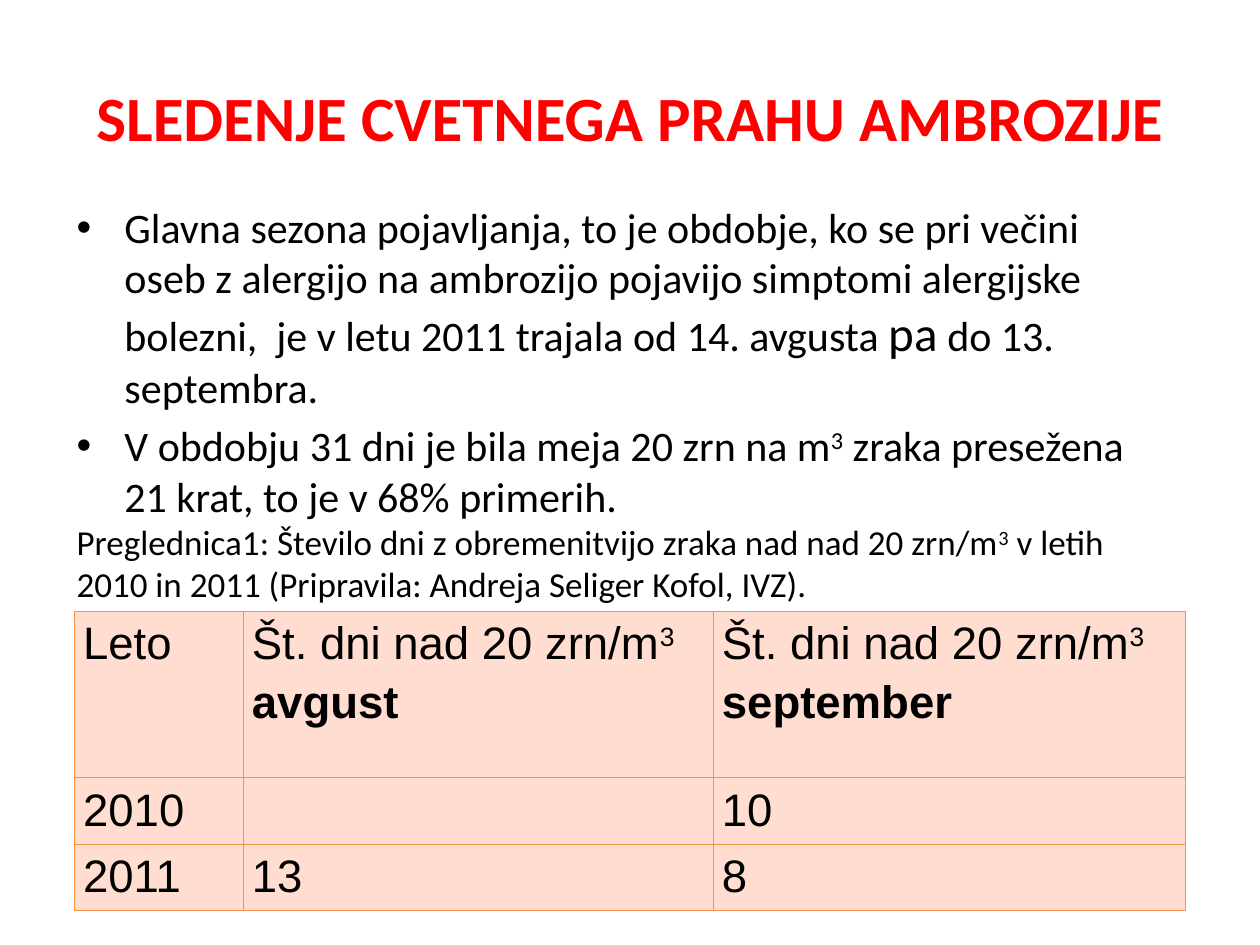
from lxml.etree import SubElement
from pptx import Presentation
from pptx.dml.color import RGBColor
from pptx.enum.text import MSO_ANCHOR as Anchor, PP_ALIGN as Align
from pptx.oxml.ns import qn
from pptx.util import Inches, Pt

RED = RGBColor(0xFF, 0x00, 0x00)
BLACK = RGBColor(0x00, 0x00, 0x00)
PEACH = RGBColor(0xFF, 0xDD, 0xD0)
ORANGE = RGBColor(0xF6, 0x92, 0x40)


class SlideBuilder:
    text_font = "Calibri"
    table_font = "Arial"
    table_size = 26
    border_width = 0.75

    def __init__(self, slide):
        self.slide = slide

    def text_frame(self, left, top, width, height, anchor=Anchor.TOP):
        box = self.slide.shapes.add_textbox(
            Inches(left), Inches(top), Inches(width), Inches(height))
        frame = box.text_frame
        frame.word_wrap = True
        frame.vertical_anchor = anchor
        return frame

    def paragraph(self, frame, first):
        return frame.paragraphs[0] if first else frame.add_paragraph()

    def run(self, paragraph, text, size, font=text_font, color=BLACK,
            bold=False, superscript=False):
        run = paragraph.add_run()
        run.text = text
        run.font.size = Pt(size)
        run.font.name = font
        run.font.color.rgb = color
        run.font.bold = bold
        if superscript:
            run.font._element.set("baseline", "30000")

    def bullet(self, paragraph, size):
        """Hang the paragraph behind a round bullet."""
        paragraph.space_before = Pt(0.2 * size)
        properties = paragraph._p.get_or_add_pPr()
        indent = Inches(0.38)
        properties.set("marL", str(indent))
        properties.set("indent", str(-indent))
        SubElement(properties, qn("a:buFont")).set("typeface", "Arial")
        SubElement(properties, qn("a:buChar")).set("char", "•")

    def title(self, text):
        frame = self.text_frame(0.5, 0.3, 9, 1.25, Anchor.MIDDLE)
        paragraph = frame.paragraphs[0]
        paragraph.alignment = Align.CENTER
        self.run(paragraph, text, 36, color=RED, bold=True)

    def body(self, paragraphs):
        """Each paragraph is (bulleted, size, runs); a run is (text, options)."""
        frame = self.text_frame(0.51, 1.55, 8.67, 5.31)
        for index, (bulleted, size, runs) in enumerate(paragraphs):
            paragraph = self.paragraph(frame, index == 0)
            if bulleted:
                self.bullet(paragraph, size)
            for text, options in runs:
                self.run(paragraph, text, **{"size": size, **options})

    def cell_borders(self, cell):
        properties = cell._tc.get_or_add_tcPr()
        for position, side in enumerate(("a:lnL", "a:lnR", "a:lnT", "a:lnB")):
            line = properties.makeelement(
                qn(side), {"w": str(Pt(self.border_width))})
            fill = SubElement(line, qn("a:solidFill"))
            SubElement(fill, qn("a:srgbClr")).set("val", str(ORANGE))
            properties.insert(position, line)

    def table(self, left, top, widths, heights, rows):
        """Each cell is a list of paragraphs, each a list of (text, options)."""
        table = self.slide.shapes.add_table(
            len(heights), len(widths), Inches(left), Inches(top),
            Inches(sum(widths)), Inches(sum(heights))).table
        for column, width in zip(table.columns, widths):
            column.width = Inches(width)
        for row, height, contents in zip(table.rows, heights, rows):
            row.height = Inches(height)
            for cell, paragraphs in zip(row.cells, contents):
                self.fill_cell(cell, paragraphs)

    def fill_cell(self, cell, paragraphs):
        cell.fill.solid()
        cell.fill.fore_color.rgb = PEACH
        self.cell_borders(cell)
        cell.margin_left = cell.margin_right = Inches(0.07)
        cell.margin_top = cell.margin_bottom = 0
        for index, runs in enumerate(paragraphs):
            paragraph = self.paragraph(cell.text_frame, index == 0)
            paragraph.line_spacing = 1.15
            for text, options in runs:
                self.run(paragraph, text, self.table_size,
                         self.table_font, **options)


def main():
    presentation = Presentation()
    presentation.slide_width = Inches(10)
    presentation.slide_height = Inches(7.5)
    builder = SlideBuilder(
        presentation.slides.add_slide(presentation.slide_layouts[6]))

    cubed = ("3", {"superscript": True})
    builder.body([
        (True, 24, [
            ("Glavna sezona pojavljanja, to je obdobje, ko se pri večini oseb "
             "z alergijo na ambrozijo pojavijo simptomi alergijske bolezni,  "
             "je v letu 2011 trajala od 14. avgusta ", {}),
            ("pa", {"size": 28}),
            (" do 13. septembra.", {})]),
        (True, 24, [
            ("V obdobju 31 dni je bila meja 20 zrn na m", {}), cubed,
            (" zraka presežena 21 krat, to je v 68% primerih.", {})]),
        (False, 20, [
            ("Preglednica1: Število dni z obremenitvijo zraka nad nad "
             "20 zrn/m", {}), cubed, (" v letih", {})]),
        (False, 20, [
            ("2010 in 2011 (Pripravila: Andreja Seliger Kofol, IVZ).", {})]),
    ])

    def plain(text):
        return [[(text, {})]]

    def month_heading(month):
        return [[("Št. dni nad 20 zrn/m", {}), cubed],
                [(month, {"bold": True})]]

    builder.table(0.59, 4.85, [1.34, 3.73, 3.75], [1.32, 0.53, 0.53], [
        [plain("Leto"), month_heading("avgust"), month_heading("september")],
        [plain("2010"), [], plain("10")],
        [plain("2011"), plain("13"), plain("8")],
    ])
    builder.title("SLEDENJE CVETNEGA PRAHU AMBROZIJE")
    presentation.save("out.pptx")


if __name__ == "__main__":
    main()
